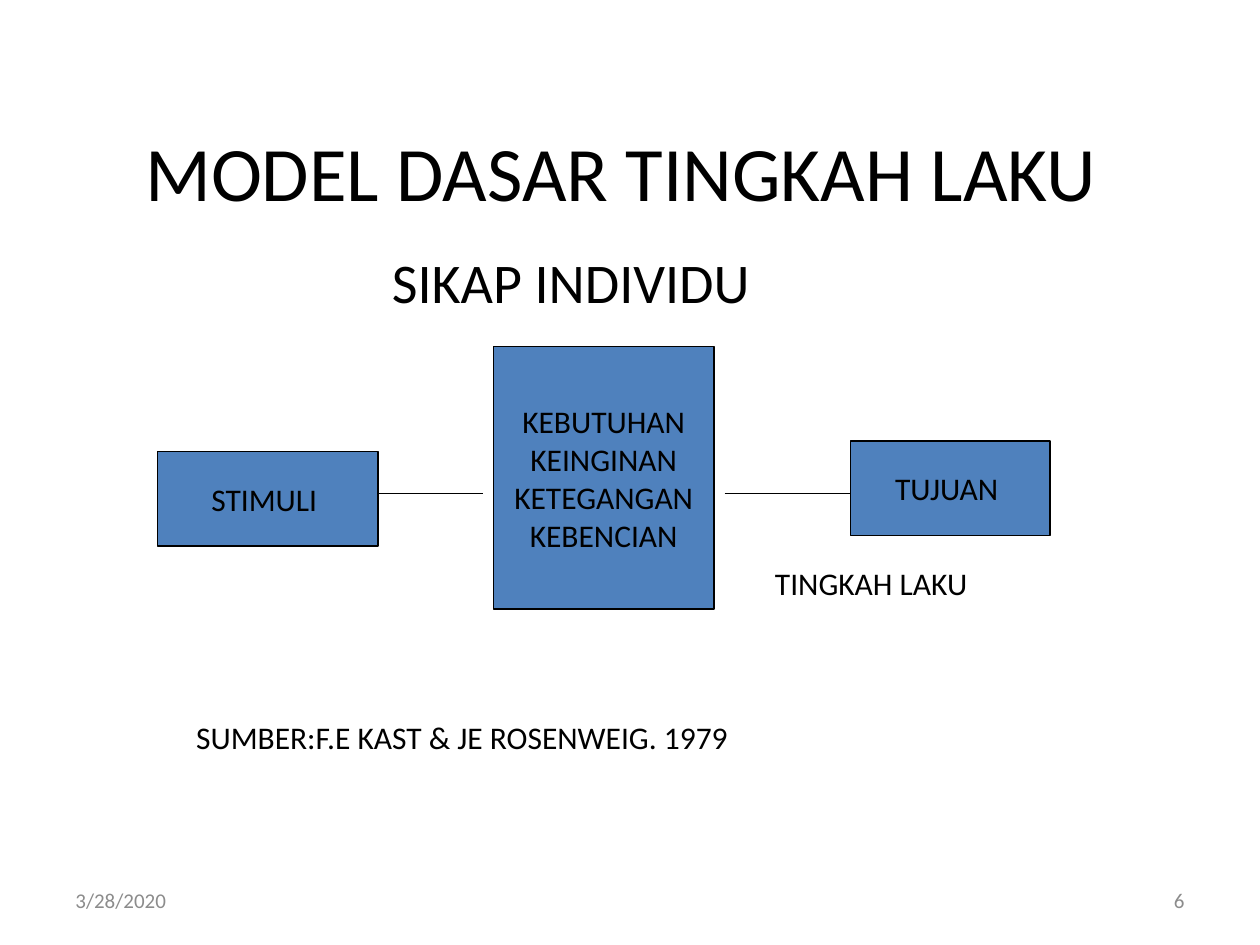
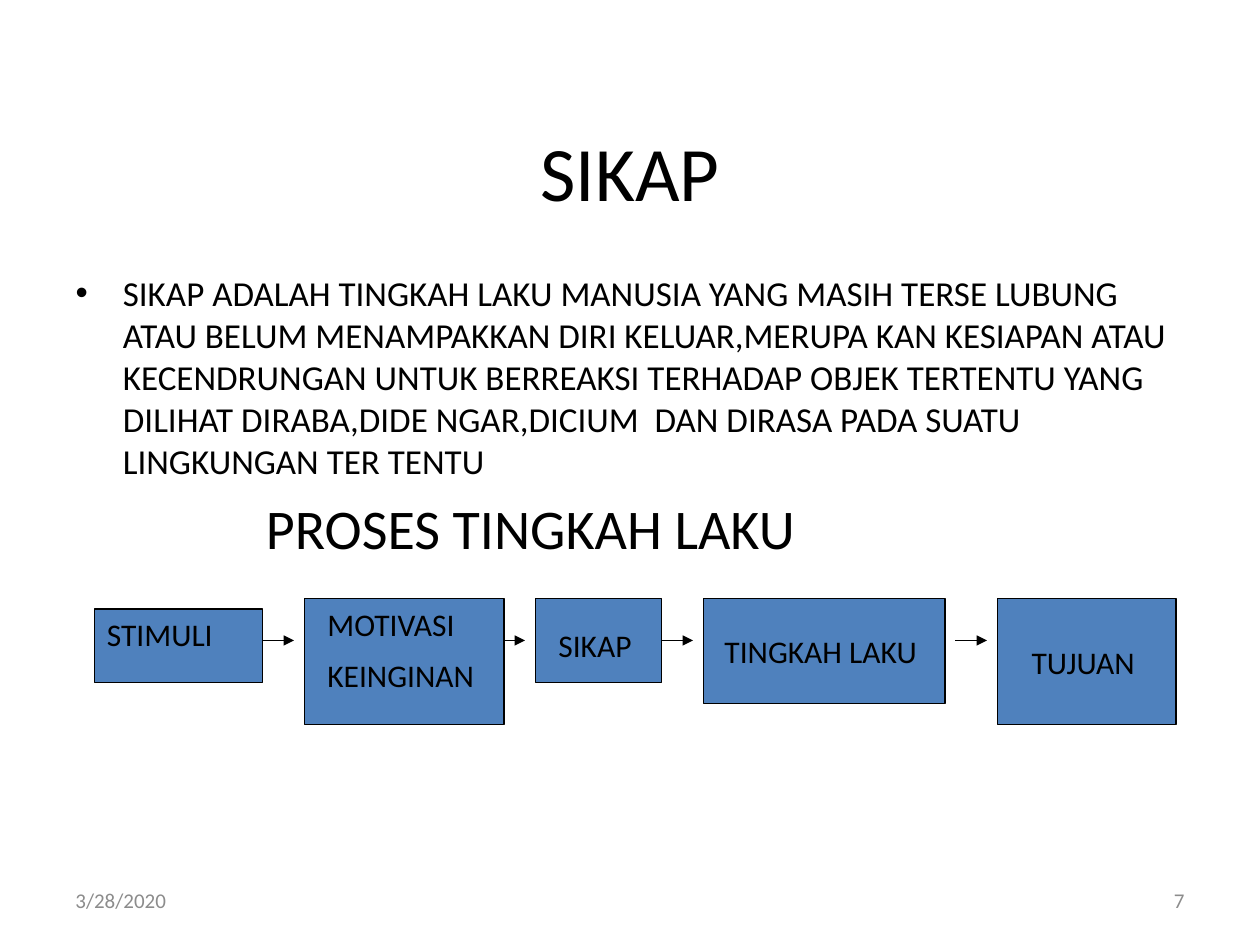
from pptx import Presentation
from pptx.dml.color import RGBColor
from pptx.enum.shapes import MSO_CONNECTOR, MSO_SHAPE
from pptx.enum.text import MSO_ANCHOR, MSO_AUTO_SIZE, PP_ALIGN
from pptx.oxml.ns import qn
from pptx.util import Emu, Pt
from lxml import etree

RECTANGLE, STRAIGHT = MSO_SHAPE.RECTANGLE, MSO_CONNECTOR.STRAIGHT
TOP, MIDDLE = MSO_ANCHOR.TOP, MSO_ANCHOR.MIDDLE
LEFT, CENTER, RIGHT = PP_ALIGN.LEFT, PP_ALIGN.CENTER, PP_ALIGN.RIGHT
FIXED = MSO_AUTO_SIZE.NONE

EMU_PER_PX = 9525
SLIDE_SIZE = (960, 720)
BLACK, GRAY, BLUE = "000000", "8C8C8C", "4F81BD"
RIGHT_SIDE = 3
BULLET_INDENT = 36


def px(length):
    return Emu(length * EMU_PER_PX)


def color(value):
    return RGBColor.from_string(value)


class Deck:
    """Holds the shared style and the slide being built."""

    font = "Calibri"
    line_width = Pt(0.75)

    def __init__(self):
        self.presentation = Presentation()
        self.presentation.slide_width, self.presentation.slide_height = map(px, SLIDE_SIZE)
        self.slide = None

    def add_slide(self, title, number):
        layout = self.presentation.slide_layouts[1]
        self.slide = self.presentation.slides.add_slide(layout)
        shape = self.slide.shapes.title
        self.place(shape, 48, 70, 864, 120)
        self.set_text(shape, [title], 44, align=CENTER, anchor=MIDDLE)
        # Footer: date and page number
        self.text(48, 667, 224, 38, ["3/28/2020"], 12, value=GRAY, anchor=MIDDLE)
        self.text(688, 667, 224, 38, [number], 12, value=GRAY, align=RIGHT, anchor=MIDDLE)

    def place(self, shape, left, top, width, height):
        bounds = {"left": left, "top": top, "width": width, "height": height}
        for name, length in bounds.items():
            setattr(shape, name, px(length))

    def style_paragraph(self, paragraph, size, value=BLACK, align=LEFT, before=0):
        for name, setting in {"alignment": align, "space_before": Pt(before)}.items():
            setattr(paragraph, name, setting)
        for name, setting in {"name": self.font, "size": Pt(size)}.items():
            setattr(paragraph.font, name, setting)
        paragraph.font.color.rgb = color(value)

    def set_text(self, shape, lines, size, value=BLACK, align=LEFT, anchor=TOP, gap=0, wrap=True):
        frame = shape.text_frame
        frame.text = "\n".join(lines)
        settings = {"word_wrap": wrap, "auto_size": FIXED, "vertical_anchor": anchor}
        for name, setting in settings.items():
            setattr(frame, name, setting)
        for index, paragraph in enumerate(frame.paragraphs):
            self.style_paragraph(paragraph, size, value, align, gap if index else 0)

    def text(self, left, top, width, height, lines, size=18, **style):
        shape = self.slide.shapes.add_textbox(*map(px, (left, top, width, height)))
        self.set_text(shape, lines, size, **style)

    def body(self, top, height, items):
        """Fill the body with (text, size, indent, bulleted) items."""
        shape = self.slide.placeholders[1]
        self.place(shape, 48, top, 864, height)
        shape.text_frame.text = "\n".join(item[0] for item in items)
        for name, setting in {"word_wrap": True, "auto_size": FIXED}.items():
            setattr(shape.text_frame, name, setting)
        for index, (paragraph, item) in enumerate(zip(shape.text_frame.paragraphs, items)):
            _, size, indent, bulleted = item
            properties = paragraph._p.get_or_add_pPr()
            properties.set("marL", str(px(indent)))
            properties.set("indent", str(px(-indent if bulleted else 0)))
            bullet = etree.SubElement(properties, qn("a:buChar" if bulleted else "a:buNone"))
            if bulleted:
                bullet.set("char", "•")
            self.style_paragraph(paragraph, size, before=7 if index else 0)

    def box(self, left, top, width, height, lines=()):
        shape = self.slide.shapes.add_shape(RECTANGLE, *map(px, (left, top, width, height)))
        shape.shadow.inherit = False
        shape.fill.solid()
        shape.fill.fore_color.rgb = color(BLUE)
        self.outline(shape)
        if lines:
            self.set_text(shape, lines, 18, align=CENTER, anchor=MIDDLE, wrap=False)
        return shape

    def outline(self, shape):
        shape.line.color.rgb = color(BLACK)
        shape.line.width = self.line_width

    def line(self, start, end, y, arrow=False, source=None):
        connector = self.slide.shapes.add_connector(STRAIGHT, *map(px, (start, y, end, y)))
        if source is not None:
            connector.begin_connect(source, RIGHT_SIDE)
        self.outline(connector)
        properties = connector._element.spPr
        if arrow:
            etree.SubElement(properties.find(qn("a:ln")), qn("a:tailEnd"), type="triangle")
        etree.SubElement(properties, qn("a:effectLst"))


def build_model_slide(deck):
    deck.add_slide("MODEL DASAR TINGKAH LAKU ", "6")
    deck.body(184, 463, [("SIKAP INDIVIDU", 32, 241, False)])
    # Stimulus, inner drives and goal
    deck.box(120, 344, 168, 72, ["STIMULI "])
    deck.box(376, 264, 168, 200, ["KEBUTUHAN", "KEINGINAN", "KETEGANGAN", "KEBENCIAN"])
    deck.box(648, 336, 152, 72, ["TUJUAN "])
    for start, end in ((288, 368), (552, 648)):
        deck.line(start, end, 376)
    # Behaviour label and source
    deck.text(581, 425, 202, 38, ["TINGKAH LAKU"])
    deck.text(140, 542, 516, 38, ["SUMBER:F.E KAST & JE ROSENWEIG. 1979"])


def build_attitude_slide(deck):
    deck.add_slide("SIKAP", "7")
    definition = (
        "SIKAP ADALAH TINGKAH LAKU MANUSIA YANG MASIH TERSE LUBUNG  ATAU BELUM "
        "MENAMPAKKAN DIRI KELUAR,MERUPA KAN KESIAPAN ATAU KECENDRUNGAN UNTUK BERREAKSI "
        "TERHADAP OBJEK TERTENTU YANG DILIHAT DIRABA,DIDE NGAR,DICIUM  DAN DIRASA PADA "
        "SUATU LINGKUNGAN TER TENTU"
    )
    deck.body(202, 441, [
        (definition, 20, BULLET_INDENT, True),
        ("PROSES TINGKAH LAKU", 32, 145, False),
    ])
    # Process boxes
    deck.box(72, 464, 128, 56)
    deck.box(232, 456, 152, 96)
    attitude = deck.box(408, 456, 96, 64)
    deck.box(760, 456, 136, 96, ["TUJUAN "])
    deck.box(536, 456, 184, 80, ["TINGKAH LAKU "])
    # Labels laid over the first three boxes
    deck.text(72, 464, 120, 38, ["STIMULI"])
    deck.text(240, 456, 160, 82, ["MOTIVASI", "KEINGINAN"], gap=8)
    deck.text(416, 472, 96, 38, ["SIKAP"])
    # Arrows between the steps
    for start, end, source in (
        (200, 224, None), (384, 400, None), (504, 528, attitude), (728, 752, None),
    ):
        deck.line(start, end, 488, arrow=True, source=source)


def main():
    deck = Deck()
    build_model_slide(deck)
    build_attitude_slide(deck)
    deck.presentation.save("out.pptx")


if __name__ == "__main__":
    main()
